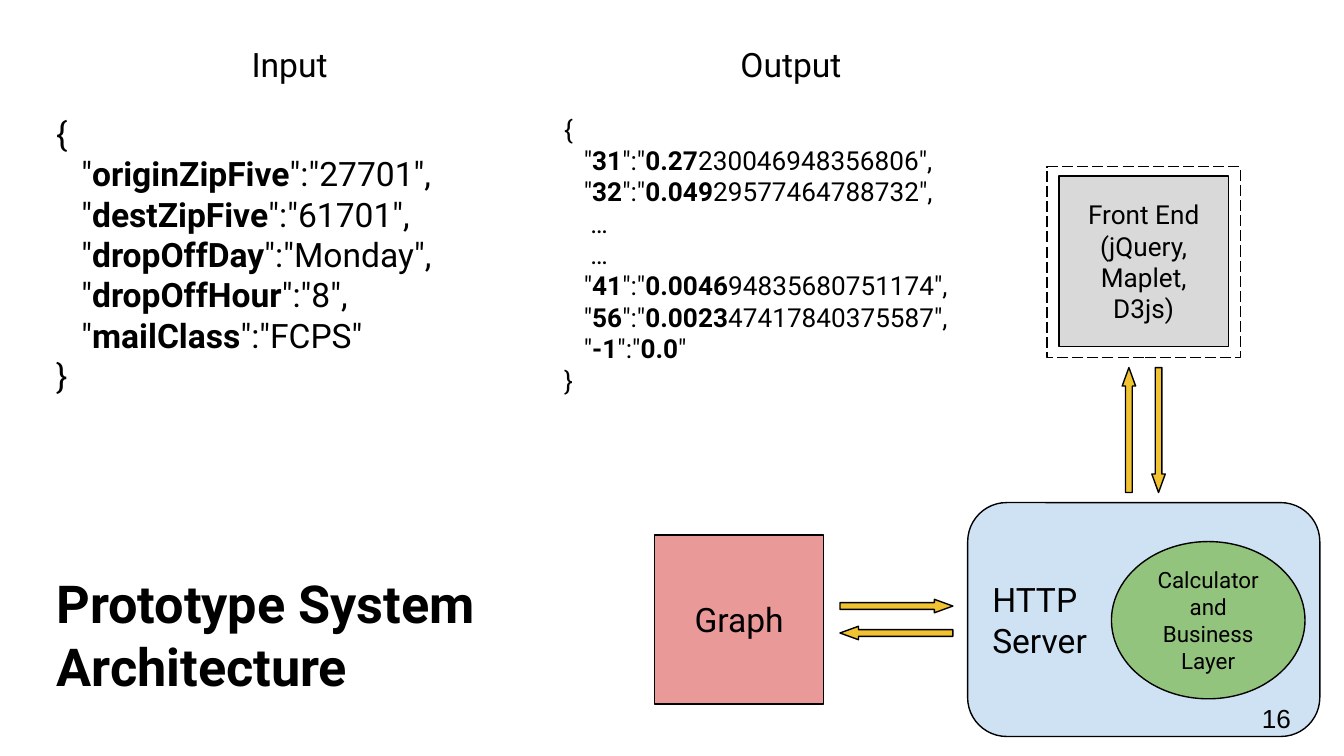
from pptx import Presentation
from pptx.dml.color import RGBColor as Rgb
from pptx.enum.dml import MSO_LINE as Dash
from pptx.enum.shapes import MSO_SHAPE as Kind
from pptx.enum.text import MSO_ANCHOR as Anchor, MSO_AUTO_SIZE as Auto, PP_ALIGN as Align
from pptx.util import Inches, Pt

HUES = {
    "ink": "000000",
    "gold": "F1C232",
    "blue": "CFE2F3",
    "green": "93C47D",
    "red": "EA9999",
    "gray": "D9D9D9",
}
INPUT = [
    "{",
    '"*originZipFive*":"27701",',
    '"*destZipFive*":"61701",',
    '"*dropOffDay*":"Monday",',
    '"*dropOffHour*":"8",',
    '"*mailClass*":"FCPS"',
    "}",
]
OUTPUT = [
    "{",
    '"*31*":"*0.27*230046948356806",',
    '"*32*":"*0.049*29577464788732",',
    "…",
    "…",
    '"*41*":"*0.0046*94835680751174",',
    '"*56*":"*0.0023*47417840375587",',
    '"*-1*":"*0.0*"',
    "}",
]
SPACES = {"{": 0, "}": 0, "…": 4}


def hue(name):
    return Rgb.from_string(HUES[name])


def style(para, size, align=Align.LEFT, bold=False, face="Roboto"):
    para.alignment = align
    font = para.font
    font.name, font.size, font.bold = face, Pt(size), bold
    font.color.rgb = hue("ink")


def set_up(frame, anchor):
    frame.word_wrap = True
    frame.auto_size = Auto.NONE
    frame.vertical_anchor = anchor
    frame.margin_left = frame.margin_right = Inches(0.1)
    frame.margin_top = frame.margin_bottom = Inches(0.1)


def write(frame, text, size, align=Align.CENTER, anchor=Anchor.MIDDLE, **look):
    set_up(frame, anchor)
    frame.text = text
    for para in frame.paragraphs:
        style(para, size, align, **look)


def add_box(slide, kind, area, fill=None):
    box = slide.shapes.add_shape(kind, *map(Inches, area))
    box.shadow.inherit = False
    if fill:
        box.fill.solid()
        box.fill.fore_color.rgb = hue(fill)
    else:
        box.fill.background()
    box.line.color.rgb = hue("ink")
    box.line.width = Pt(0.75)
    return box


def add_arrow(slide, mid_x, mid_y, size, turn):
    area = mid_x - 0.05, mid_y - size / 2, 0.1, size
    arrow = add_box(slide, Kind.UP_ARROW, area, "gold")
    arrow.adjustments[1] = 1.38
    arrow.rotation = turn


def add_text(slide, area):
    return slide.shapes.add_textbox(*map(Inches, area)).text_frame


def add_code(slide, area, lines, size):
    frame = add_text(slide, area)
    set_up(frame, Anchor.TOP)
    for num, line in enumerate(lines):
        para = frame.add_paragraph() if num else frame.paragraphs[0]
        style(para, size)
        indent = Pt(SPACES.get(line, 3) * size * 0.25)
        para._p.get_or_add_pPr().set("marL", str(indent))
        for part, text in enumerate(line.split("*")):
            run = para.add_run()
            run.text = text
            if part % 2:
                run.font.bold = True


def add_title(slide, area, text):
    title = slide.shapes.title
    title.left, title.top, title.width, title.height = map(Inches, area)
    write(title.text_frame, text, 28, Align.LEFT, Anchor.TOP, bold=True)


def main():
    """Build the prototype architecture slide."""
    deck = Presentation()
    deck.slide_width, deck.slide_height = Inches(10), Inches(10 * 9 / 16)
    slide = deck.slides.add_slide(deck.slide_layouts[5])
    add_title(slide, (0.32, 4.15, 3.92, 1.26), "Prototype System Architecture")

    server = add_box(slide, Kind.ROUNDED_RECTANGLE, (7.2, 3.74, 2.62, 1.74), "blue")
    write(server.text_frame, "HTTP\nServer", 18, Align.LEFT)
    logic = add_box(slide, Kind.OVAL, (8.27, 4.03, 1.44, 1.17), "green")
    write(logic.text_frame, "Calculator and Business Layer", 12)
    store = add_box(slide, Kind.RECTANGLE, (4.87, 3.98, 1.26, 1.26), "red")
    write(store.text_frame, "Graph", 18)
    border = add_box(slide, Kind.RECTANGLE, (7.79, 1.24, 1.44, 1.42))
    border.line.dash_style = Dash.LONG_DASH
    front = add_box(slide, Kind.RECTANGLE, (7.88, 1.31, 1.26, 1.27), "gray")
    write(front.text_frame, "Front End (jQuery, Maplet, D3js)", 14)

    add_arrow(slide, 8.4, 3.2, 0.93, 0)
    add_arrow(slide, 8.62, 3.2, 0.93, 180)
    add_arrow(slide, 6.67, 4.51, 0.84, 90)
    add_arrow(slide, 6.67, 4.71, 0.84, 270)

    for left, text in ((1.14, "Input"), (4.87, "Output")):
        write(add_text(slide, (left, 0.3, 2.03, 0.36)), text, 18)
    add_code(slide, (0.32, 0.74, 3.67, 2.76), INPUT, 18)
    add_code(slide, (4.1, 0.74, 3.57, 2.82), OUTPUT, 14)
    page = add_text(slide, (9.29, 5.13, 0.6, 0.43))
    write(page, "16", 14, Align.LEFT, face="Arial")
    deck.save("out.pptx")


if __name__ == "__main__":
    main()
